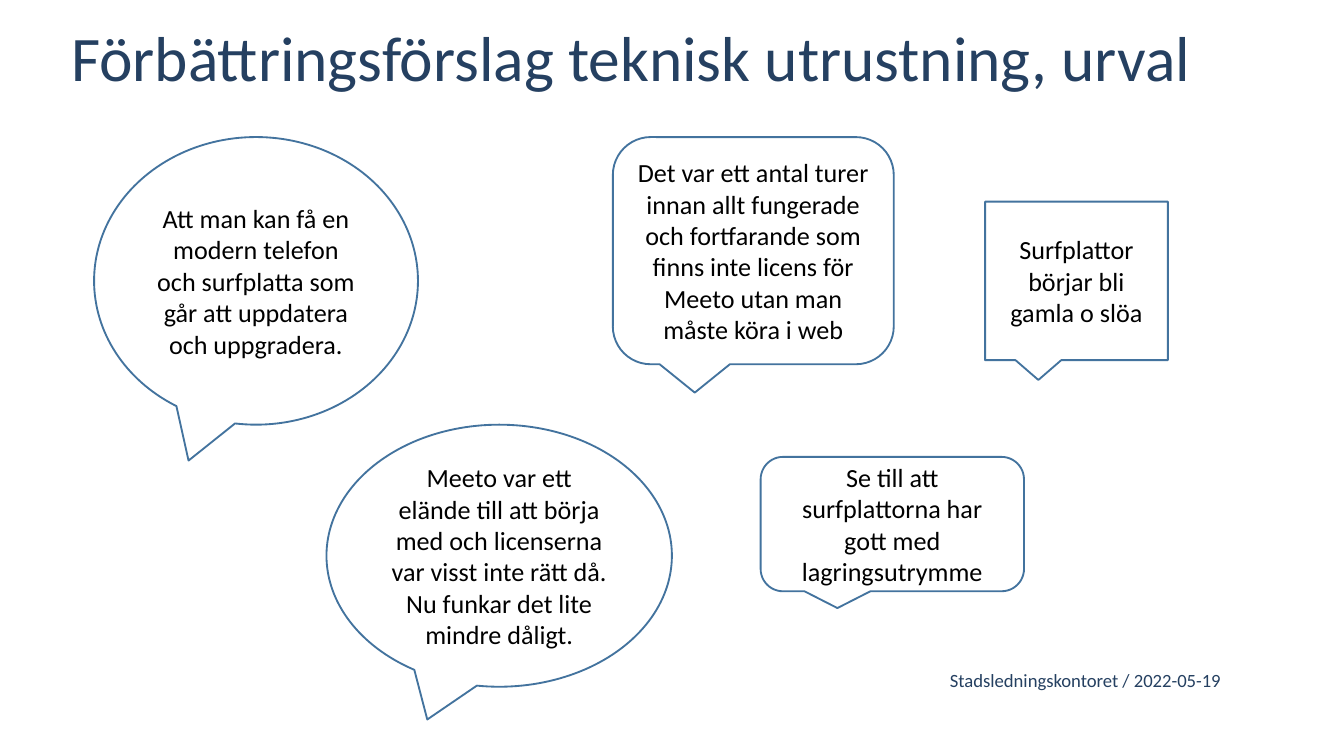
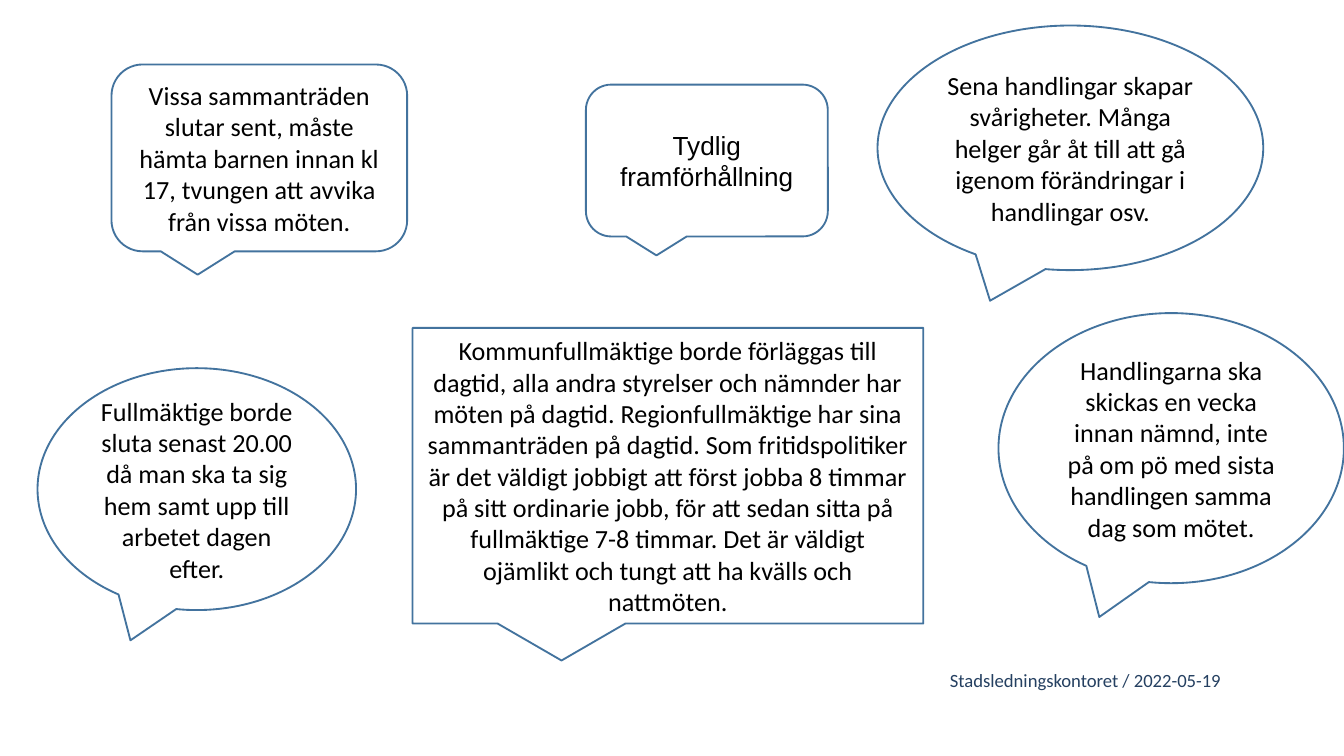
"""Build two slides of survey quotes in speech bubbles."""
import dataclasses

import pptx
import pptx.dml.color
import pptx.enum.shapes
import pptx.enum.text
import pptx.util

Inches = pptx.util.Inches
Pt = pptx.util.Pt
Color = pptx.dml.color.RGBColor.from_string
Align = pptx.enum.text.PP_ALIGN
Anchor = pptx.enum.text.MSO_ANCHOR
Fit = pptx.enum.text.MSO_AUTO_SIZE
Kind = pptx.enum.shapes.MSO_SHAPE

OVAL = Kind.OVAL_CALLOUT
ROUND = Kind.ROUNDED_RECTANGULAR_CALLOUT
RECT = Kind.RECTANGULAR_CALLOUT


@dataclasses.dataclass(frozen=True)
class Theme:
    font: str = "Calibri"
    alt: str = "Arial"
    navy: str = "254061"
    edge: str = "43739E"
    ink: str = "000000"
    title: int = 34
    body: int = 14
    foot: int = 10
    line: int = 1


THEME = Theme()
FOOT = "Stadsledningskontoret / 2022-05-19"

SLIDES = [
    {
        "title": "Förbättringsförslag teknisk utrustning, urval",
        "quotes": [
            (ROUND, (4.56, 1.02, 2.09, 1.69), THEME.font,
             "Det var ett antal turer innan allt fungerade och fortfarande som "
             "finns inte licens för Meeto utan man måste köra i web"),
            (OVAL, (2.43, 3.16, 2.57, 1.95), THEME.font,
             "Meeto var ett elände till att börja med och licenserna var visst "
             "inte rätt då. Nu funkar det lite mindre dåligt."),
            (RECT, (7.33, 1.5, 1.36, 1.18), THEME.font,
             "Surfplattor börjar bli gamla o slöa"),
            (ROUND, (5.66, 3.4, 1.96, 1), THEME.font,
             "Se till att surfplattorna har gott med lagringsutrymme"),
            (OVAL, (0.7, 1.02, 2.41, 2.14), THEME.font,
             "Att man kan få en modern telefon och surfplatta som går att "
             "uppdatera och uppgradera."),
        ],
    },
    {
        "title": None,
        "quotes": [
            (OVAL, (6.53, 0.19, 2.87, 1.82), THEME.font,
             "Sena handlingar skapar svårigheter. Många helger går åt till att "
             "gå igenom förändringar i handlingar osv."),
            (ROUND, (0.83, 0.48, 2.2, 1.39), THEME.font,
             "Vissa sammanträden slutar sent, måste hämta barnen innan kl 17, "
             "tvungen att avvika från vissa möten."),
            (RECT, (3.07, 2.44, 3.8, 2.2), THEME.font,
             "Kommunfullmäktige borde förläggas till dagtid, alla andra "
             "styrelser och nämnder har möten på dagtid. Regionfullmäktige har "
             "sina sammanträden på dagtid. Som fritidspolitiker är det väldigt "
             "jobbigt att först jobba 8 timmar på sitt ordinarie jobb, för att "
             "sedan sitta på fullmäktige 7-8 timmar. Det är väldigt ojämlikt "
             "och tungt att ha kvälls och nattmöten."),
            (OVAL, (0.28, 2.74, 2.37, 1.8), THEME.font,
             "Fullmäktige borde sluta senast 20.00 då man ska ta sig hem samt "
             "upp till arbetet dagen efter."),
            (ROUND, (4.36, 0.63, 1.8, 1.13), THEME.alt,
             "Tydlig framförhållning"),
            (OVAL, (7.43, 2.33, 2.57, 2.01), THEME.font,
             "Handlingarna ska skickas en vecka innan nämnd, inte på om pö med "
             "sista handlingen samma dag som mötet."),
        ],
    },
]


def write(shape, text, size, color, align, anchor, font=THEME.font):
    frame = shape.text_frame
    frame.word_wrap = True
    frame.vertical_anchor = anchor
    frame.text = text
    para = frame.paragraphs[0]
    para.alignment = align
    para.font.name = font
    para.font.size = Pt(size)
    para.font.color.rgb = Color(color)
    return frame


def head(slide, text):
    shape = slide.shapes.title
    shape.left, shape.top = Inches(0.53), Inches(0.2)
    shape.width, shape.height = Inches(9.13), Inches(0.67)
    frame = write(shape, text, THEME.title, THEME.navy, Align.LEFT, Anchor.TOP)
    frame.auto_size = Fit.NONE
    frame.margin_left = frame.margin_right = 0
    frame.margin_top = frame.margin_bottom = 0
    frame.paragraphs[0].line_spacing = 0.9


def foot(slide):
    box = slide.shapes.add_textbox(*map(Inches, (5.24, 4.92, 3.94, 0.27)))
    frame = write(box, FOOT, THEME.foot, THEME.navy, Align.RIGHT, Anchor.BOTTOM)
    frame.auto_size = Fit.SHAPE_TO_FIT_TEXT


def bubble(slide, kind, place, font, text):
    shape = slide.shapes.add_shape(kind, *map(Inches, place))
    shape.shadow.inherit = False
    shape.fill.background()
    shape.line.color.rgb = Color(THEME.edge)
    shape.line.width = Pt(THEME.line)
    write(shape, text, THEME.body, THEME.ink, Align.CENTER, Anchor.MIDDLE, font)


def main():
    deck = pptx.Presentation()
    deck.slide_width = Inches(10)
    deck.slide_height = deck.slide_width * 9 // 16
    for page in SLIDES:
        layout = deck.slide_layouts[5 if page["title"] else 6]
        slide = deck.slides.add_slide(layout)
        foot(slide)
        if page["title"]:
            head(slide, page["title"])
        for quote in page["quotes"]:
            bubble(slide, *quote)
    deck.save("out.pptx")


if __name__ == "__main__":
    main()
